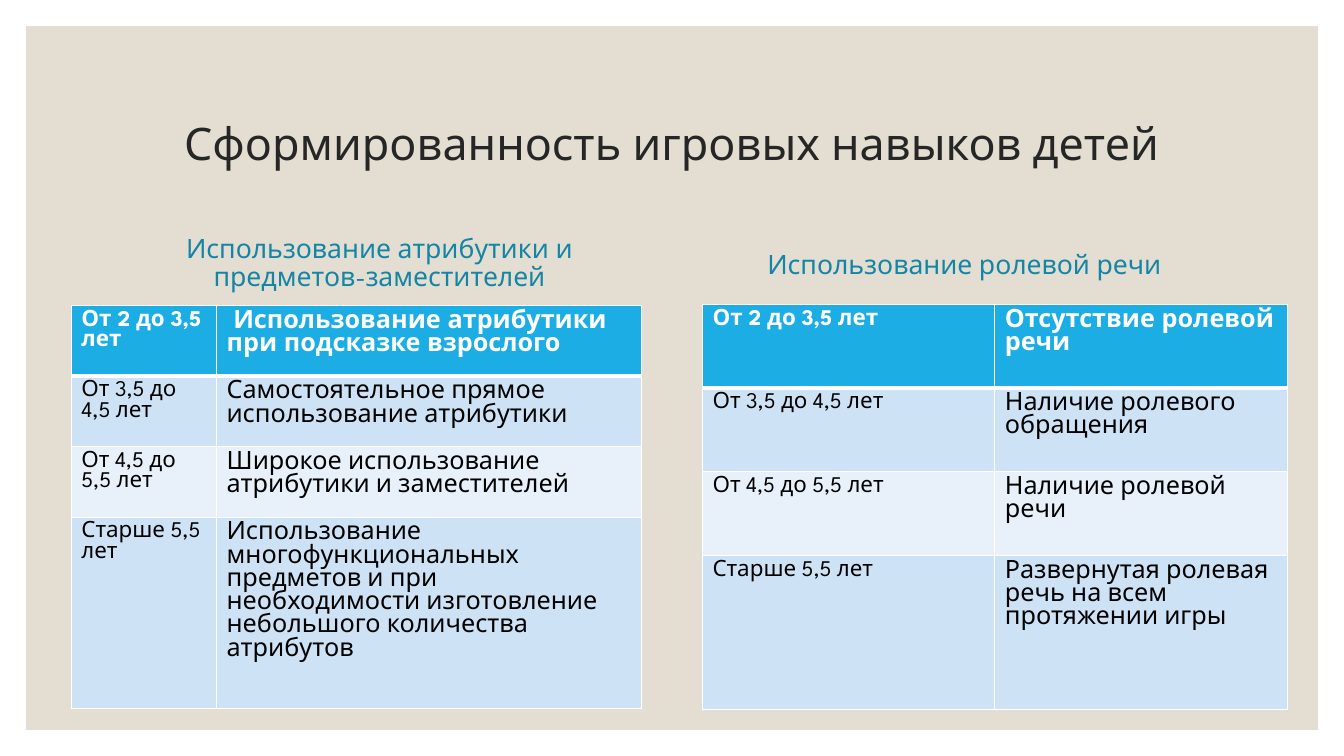
from dataclasses import dataclass

from lxml import etree
from pptx import Presentation
from pptx.dml.color import RGBColor
from pptx.enum.shapes import MSO_SHAPE
from pptx.enum.text import MSO_ANCHOR, PP_ALIGN
from pptx.oxml.ns import qn
from pptx.util import Pt

RECTANGLE = MSO_SHAPE.RECTANGLE
CENTER, LEFT = PP_ALIGN.CENTER, PP_ALIGN.LEFT
MIDDLE = MSO_ANCHOR.MIDDLE


@dataclass(frozen=True)
class Theme:
    font: str = "League Spartan"
    panel: str = "E3DED1"
    title: str = "262626"
    subtitle: str = "1485A4"
    header: str = "1CADE4"
    bands: tuple = ("CDE3F5", "E8F1FA")
    white: str = "FFFFFF"
    black: str = "000000"
    title_size: float = 32
    subtitle_size: float = 19
    age_size: float = 16
    skill_size: float = 18
    border: float = 1
    header_border: float = 3


def write_text(frame, text, *, font, size, color, bold=False, align=LEFT, spacing=None):
    paragraph = frame.paragraphs[0]
    paragraph.alignment = align
    if spacing:
        paragraph.line_spacing = spacing
    run = paragraph.add_run()
    run.text = text
    run.font.name = font
    run.font.size = Pt(size)
    run.font.bold = bold
    run.font.color.rgb = RGBColor.from_string(color)


class SlideBuilder:
    def __init__(self, slide, theme):
        self.slide = slide
        self.theme = theme

    def panel(self, left, top, width, height):
        shape = self.slide.shapes.add_shape(
            RECTANGLE, Pt(left), Pt(top), Pt(width), Pt(height))
        shape.shadow.inherit = False
        shape.fill.solid()
        shape.fill.fore_color.rgb = RGBColor.from_string(self.theme.panel)
        shape.line.fill.background()

    def text(self, text, left, top, width, height, **text_format):
        shape = self.slide.shapes.add_textbox(
            Pt(left), Pt(top), Pt(width), Pt(height))
        frame = shape.text_frame
        frame.word_wrap = True
        frame.vertical_anchor = MIDDLE
        write_text(frame, text, font=self.theme.font, align=CENTER, **text_format)

    def borders(self, cell, top, bottom):
        properties = cell._tc.get_or_add_tcPr()
        border = self.theme.border
        for tag, width in (("lnL", border), ("lnR", border), ("lnT", top), ("lnB", bottom)):
            line = etree.SubElement(properties, qn(f"a:{tag}"), w=str(Pt(width)))
            fill = etree.SubElement(line, qn("a:solidFill"))
            etree.SubElement(fill, qn("a:srgbClr"), val=self.theme.white)

    def table(self, rows, left, top, widths, heights):
        theme = self.theme
        table = self.slide.shapes.add_table(
            len(rows), len(widths), Pt(left), Pt(top),
            Pt(sum(widths)), Pt(sum(heights))).table
        for column, width in zip(table.columns, widths):
            column.width = Pt(width)
        for row, height in zip(table.rows, heights):
            row.height = Pt(height)
        for row_index, texts in enumerate(rows):
            is_header = row_index == 0
            fill = theme.header if is_header else theme.bands[(row_index - 1) % 2]
            # The header and the first data row share the thick rule
            upper = theme.header_border if row_index == 1 else theme.border
            lower = theme.header_border if is_header else theme.border
            for column_index, text in enumerate(texts):
                cell = table.cell(row_index, column_index)
                self.borders(cell, upper, lower)
                cell.fill.solid()
                cell.fill.fore_color.rgb = RGBColor.from_string(fill)
                write_text(
                    cell.text_frame, text, font=theme.font, bold=is_header,
                    size=theme.skill_size if column_index else theme.age_size,
                    color=theme.white if is_header else theme.black)


AGES = ("От 2 до 3,5 лет", "От 3,5 до 4,5 лет", "От 4,5 до 5,5 лет", "Старше 5,5 лет")
ATTRIBUTE_SKILLS = (
    " Использование атрибутики при подсказке взрослого",
    "Самостоятельное прямое использование атрибутики",
    "Широкое использование атрибутики и заместителей",
    "Использование многофункциональных предметов и при необходимости "
    "изготовление небольшого количества атрибутов",
)
SPEECH_SKILLS = (
    "Отсутствие ролевой речи",
    "Наличие ролевого обращения",
    "Наличие ролевой речи",
    "Развернутая ролевая речь на всем протяжении игры",
)


def main():
    presentation = Presentation()
    presentation.slide_width, presentation.slide_height = Pt(960), Pt(540)
    theme = Theme()
    slide = presentation.slides.add_slide(presentation.slide_layouts[6])
    builder = SlideBuilder(slide, theme)

    # Background panel and title
    margin = 18.7
    builder.panel(margin, margin, 960 - 2 * margin, 540 - 2 * margin)
    builder.text("Сформированность игровых навыков детей", 84, 50.4, 792, 108,
                 size=theme.title_size, color=theme.title, spacing=0.9)

    # Column headings
    for heading, left, spacing in (
            ("Использование атрибутики и предметов-заместителей", 84, 0.9),
            ("Использование ролевой речи", 501.8, None)):
        builder.text(heading, left, 163.4, 374.4, 50.4, size=theme.subtitle_size,
                     color=theme.subtitle, spacing=spacing)

    # Skill tables by age
    builder.table(list(zip(AGES, ATTRIBUTE_SKILLS)), 51, 218.2,
                  (103.7, 303.8), [49.7] * 3 + [134.6])
    builder.table(list(zip(AGES, SPEECH_SKILLS)), 501.8, 217.4,
                  (208.8, 208.8), [59.8] * 3 + [110.2])

    presentation.save("out.pptx")


if __name__ == "__main__":
    main()
